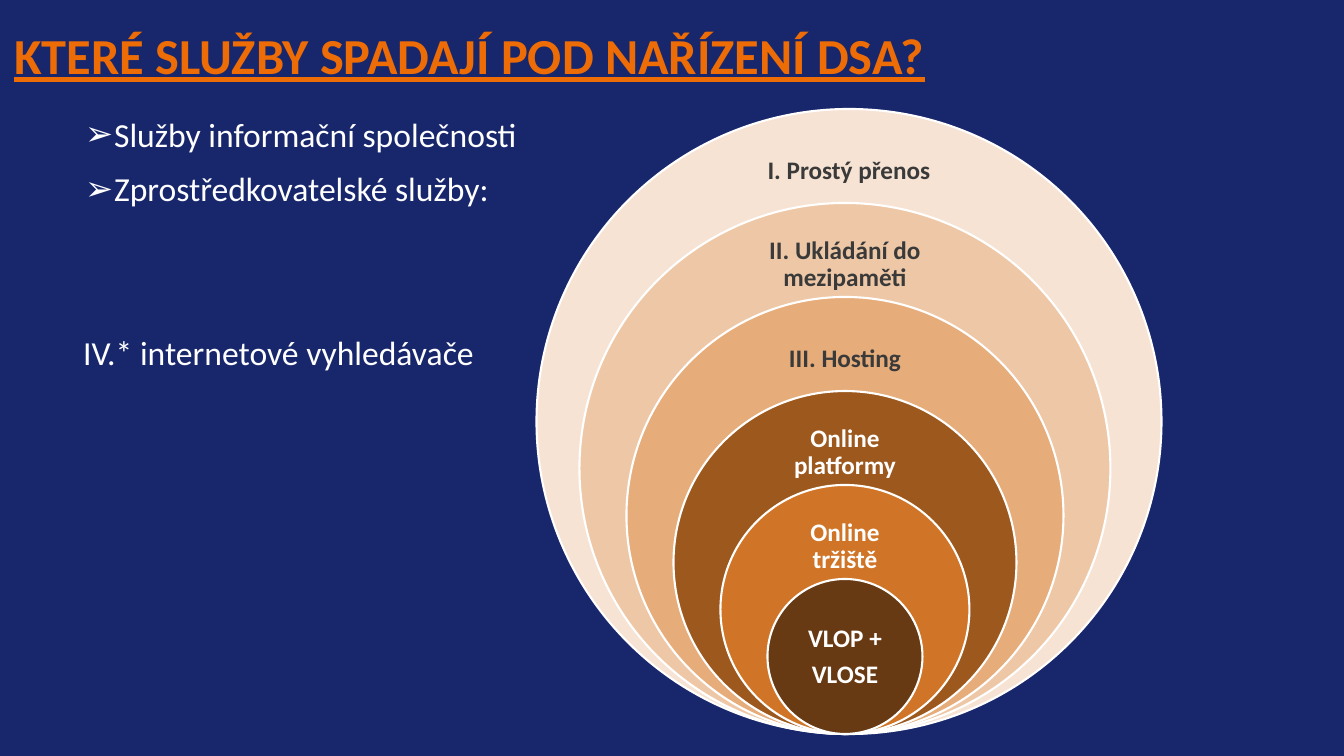
import lxml.etree
import pptx
import pptx.dml.color
import pptx.enum.shapes
import pptx.enum.text
import pptx.oxml.ns
import pptx.util

TITLE = "KTERÉ SLUŽBY SPADAJÍ POD NAŘÍZENÍ DSA?"
ITEMS = [
    {"text": "Služby informační společnosti", "bullet": "➢", "before": 0},
    {"text": "Zprostředkovatelské služby:", "bullet": "➢", "before": 0},
    {"text": "IV.* internetové vyhledávače", "bullet": None, "before": 78},
]
RINGS = [
    {"lines": ["I. Prostý přenos"], "fill": "cream", "ink": "dark", "wide": 234},
    {"lines": ["II. Ukládání do mezipaměti"], "fill": "peach", "ink": "dark", "wide": 229},
    {"lines": ["III. Hosting"], "fill": "sand", "ink": "dark", "wide": 226},
    {"lines": ["Online platformy"], "fill": "brown", "ink": "white", "wide": 185},
    {"lines": ["Online tržiště"], "fill": "rust", "ink": "white", "wide": 162},
    {"lines": ["VLOP +", "VLOSE"], "fill": "cocoa", "ink": "white", "wide": 111},
]
COLORS = {
    "navy": "18276C", "orange": "ED6C05", "white": "FFFFFF", "dark": "3A3A3A",
    "cream": "F7E3D3", "peach": "EEC8A6", "sand": "E6AC7A",
    "brown": "9C581D", "rust": "D07527", "cocoa": "683A14",
}
ALIGN = pptx.enum.text.PP_ALIGN
MIDDLE = pptx.enum.text.MSO_ANCHOR.MIDDLE
FIXED = pptx.enum.text.MSO_AUTO_SIZE.NONE
Pt = pptx.util.Pt
FONTS = {
    "title": {"name": "Calibri", "size": Pt(36), "bold": True, "underline": True},
    "item": {"name": "Calibri", "size": Pt(24)},
    "label": {"name": "Calibri", "size": Pt(18), "bold": True},
}
LABEL = {"alignment": ALIGN.CENTER, "line_spacing": 0.9, "space_after": Pt(6.3)}
SIDES = ("margin_left", "margin_top", "margin_right", "margin_bottom")
OUTER, STEP, BASE = 625, 94, 734


def px(count):
    return round(count * 914400 / 100.8)


def box(left, top, width, height):
    return [px(side) for side in (left, top, width, height)]


def style(target, values):
    for name, value in values.items():
        setattr(target, name, value)


def rgb(name):
    return pptx.dml.color.RGBColor.from_string(COLORS[name])


def paint(fill, name):
    fill.solid()
    fill.fore_color.rgb = rgb(name)


def write(para, text, kind, ink):
    run = para.add_run()
    run.text = text
    style(run.font, FONTS[kind])
    run.font.color.rgb = rgb(ink)


def place(shape, left, top, width, height):
    spots = box(left, top, width, height)
    style(shape, dict(zip(("left", "top", "width", "height"), spots)))


def line(frame, index):
    return frame.add_paragraph() if index else frame.paragraphs[0]


def node(parent, tag, **values):
    return lxml.etree.SubElement(parent, pptx.oxml.ns.qn(tag), values)


def mark(para, bullet):
    props = para._p.get_or_add_pPr()
    props.set("marL", str(px(90 if bullet else 59)))
    props.set("indent", str(px(-29 if bullet else 0)))
    if bullet:
        node(node(props, "a:buClr"), "a:srgbClr", val=COLORS["white"])
        node(props, "a:buChar", char=bullet)
    else:
        node(props, "a:buNone")


def add_title(slide):
    title = slide.shapes.title
    place(title, 14, 22, 1315, 65)
    frame = title.text_frame
    style(frame, {"auto_size": FIXED, "vertical_anchor": MIDDLE, "word_wrap": True})
    style(frame, dict.fromkeys(SIDES, 0))
    frame.paragraphs[0].alignment = ALIGN.LEFT
    write(frame.paragraphs[0], TITLE, "title", "orange")


def add_list(slide):
    body = slide.placeholders[1]
    place(body, 14, 109, 522, 647)
    frame = body.text_frame
    style(frame, {"auto_size": FIXED, "word_wrap": True})
    for index, item in enumerate(ITEMS):
        para = line(frame, index)
        para.level = 2
        mark(para, item["bullet"])
        style(para, {"space_before": Pt(item["before"]), "space_after": Pt(10)})
        write(para, item["text"], "item", "white")


def add_rings(slide):
    shapes = slide.shapes.add_group_shape().shapes
    oval = pptx.enum.shapes.MSO_SHAPE.OVAL
    for index, ring in enumerate(RINGS):
        size = OUTER - STEP * index
        top = BASE - size
        mid = 845 if index else 849
        disc = shapes.add_shape(oval, *box(mid - size / 2, top, size, size))
        disc.shadow.inherit = False
        paint(disc.fill, ring["fill"])
        paint(disc.line.fill, "white")
        disc.line.width = Pt(1.5)
        drop, high = (39, 78) if ring is RINGS[-1] else (31, 62)
        wide = ring["wide"]
        label = shapes.add_textbox(*box(mid - wide / 2, top + drop, wide, high))
        frame = label.text_frame
        style(frame, {"word_wrap": True, "vertical_anchor": MIDDLE})
        style(frame, dict.fromkeys(SIDES, px(14)))
        for row, text in enumerate(ring["lines"]):
            para = line(frame, row)
            style(para, LABEL)
            write(para, text, "label", ring["ink"])


def main():
    deck = pptx.Presentation()
    style(deck, {"slide_width": px(1344), "slide_height": px(756)})
    slide = deck.slides.add_slide(deck.slide_layouts[1])
    paint(slide.background.fill, "navy")
    add_title(slide)
    add_list(slide)
    add_rings(slide)
    deck.save("out.pptx")


if __name__ == "__main__":
    main()
